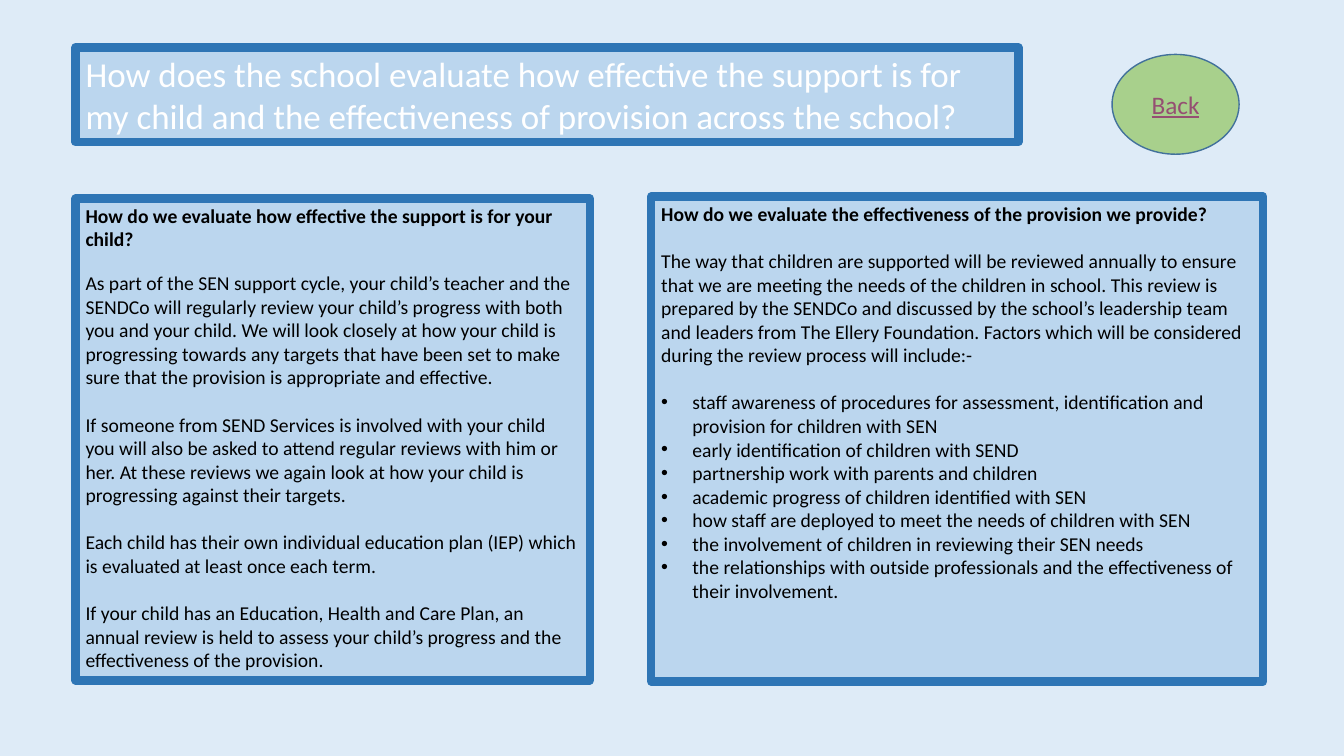
from lxml.etree import SubElement
from pptx import Presentation
from pptx.dml.color import RGBColor
from pptx.enum.shapes import MSO_SHAPE as Shape
from pptx.enum.text import MSO_ANCHOR as Anchor, PP_ALIGN as Align
from pptx.oxml.ns import qn
from pptx.util import Inches, Pt

FONT = "Calibri"
PALE_BLUE, PANEL_BLUE, BORDER_BLUE = "DEEBF7", "BBD6EE", "2E75B5"
GREEN, OUTLINE_BLUE, LINK_PURPLE = "A8D08C", "42719B", "954F72"
WHITE, BLACK = "FFFFFF", "000000"
LINE_GAP = 17
BULLET_INDENT = 0.31

TITLE = ("How does the school evaluate how effective the support is for my child "
         "and the effectiveness of provision across the school?")
CHILD_HEADING = "How do we evaluate how effective the support is for your child?"
CHILD_TEXTS = [
    "As part of the SEN support cycle, your child’s teacher and the SENDCo will regularly "
    "review your child’s progress with both you and your child. We will look closely at how "
    "your child is progressing towards any targets that have been set to make sure that the "
    "provision is appropriate and effective.",
    "If someone from SEND Services is involved with your child you will also be asked to attend "
    "regular reviews with him or her. At these reviews we again look at how your child is "
    "progressing against their targets.",
    "Each child has their own individual education plan (IEP) which is evaluated at least once "
    "each term.",
    "If your child has an Education, Health and Care Plan, an annual review is held to assess "
    "your child’s progress and the effectiveness of the provision.",
]
PROVISION_HEADING = "How do we evaluate the effectiveness of the provision we provide?"
PROVISION_TEXTS = [
    "The way that children are supported will be reviewed annually to ensure that we are meeting "
    "the needs of the children in school. This review is prepared by the SENDCo and discussed by "
    "the school’s leadership team and leaders from The Ellery Foundation. Factors which will be "
    "considered during the review process will include:-",
]
FACTORS = [
    "staff awareness of procedures for assessment, identification and provision for children "
    "with SEN",
    "early identification of children with SEND",
    "partnership work with parents and children",
    "academic progress of children identified with SEN",
    "how staff are deployed to meet the needs of children with SEN",
    "the involvement of children in reviewing their SEN needs",
    "the relationships with outside professionals and the effectiveness of their involvement.",
]


def color(value):
    """Turn a hex string into a colour."""
    return RGBColor.from_string(value)


def add_box(page, kind, box, fill, line, width):
    """Add a filled, outlined shape in the given box and return it."""
    shape = page.shapes.add_shape(kind, *map(Inches, box))
    shape.shadow.inherit = False
    shape.fill.solid()
    shape.fill.fore_color.rgb = color(fill)
    shape.line.color.rgb = color(line)
    shape.line.width = Pt(width)
    SubElement(shape.line._get_or_add_ln(), qn("a:round"))
    shape.text_frame.word_wrap = True
    shape.text_frame.vertical_anchor = Anchor.TOP
    return shape


def write(para, text, size, ink, align=Align.LEFT, bold=False, gap=0):
    """Fill a paragraph with styled text, a gap in points above it."""
    para.text = text
    para.alignment = align
    para.space_before = Pt(gap)
    para.font.name = FONT
    para.font.size = Pt(size)
    para.font.bold = bold
    para.font.color.rgb = color(ink)


def add_bullet(para):
    """Give a paragraph a hanging bullet."""
    props = para._p.get_or_add_pPr()
    props.set("marL", str(Inches(BULLET_INDENT)))
    props.set("indent", str(-Inches(BULLET_INDENT)))
    bullet_font = SubElement(props, qn("a:buFont"))
    bullet_font.set("typeface", "Arial")
    bullet = SubElement(props, qn("a:buChar"))
    bullet.set("char", "•")
    props.append(props.find(qn("a:defRPr")))


def add_title(page, box):
    """Place the framed question at the top of the page."""
    frame = add_box(page, Shape.RECTANGLE, box, PANEL_BLUE, BORDER_BLUE, 6).text_frame
    write(frame.paragraphs[0], TITLE, 25, WHITE)


def add_back_button(page, box):
    """Place the round back button."""
    frame = add_box(page, Shape.OVAL, box, GREEN, OUTLINE_BLUE, 1).text_frame
    frame.vertical_anchor = Anchor.MIDDLE
    para = frame.paragraphs[0]
    write(para, "Back", 18, LINK_PURPLE, Align.CENTER)
    para.font.underline = True


def add_panel(page, box, heading, texts, bullets=(), first_gap=LINE_GAP):
    """Place a framed panel with a bold heading, paragraphs and bullets."""
    frame = add_box(page, Shape.RECTANGLE, box, PANEL_BLUE, BORDER_BLUE, 6).text_frame
    write(frame.paragraphs[0], heading, 14, BLACK, bold=True)
    for index, text in enumerate(texts):
        gap = LINE_GAP if index else first_gap
        write(frame.add_paragraph(), text, 14, BLACK, gap=gap)
    for index, text in enumerate(bullets):
        para = frame.add_paragraph()
        write(para, text, 14, BLACK, gap=0 if index else LINE_GAP)
        add_bullet(para)


def main():
    """Build the slide and save the deck."""
    deck = Presentation()
    deck.slide_width, deck.slide_height = Inches(13.33), Inches(7.5)
    page = deck.slides.add_slide(deck.slide_layouts[6])
    page.background.fill.solid()
    page.background.fill.fore_color.rgb = color(PALE_BLUE)
    add_title(page, (0.75, 0.47, 9.35, 0.94))
    add_back_button(page, (11.03, 0.54, 1.26, 0.99))
    add_panel(page, (0.75, 1.97, 5.1, 4.78), CHILD_HEADING, CHILD_TEXTS, first_gap=14.5)
    add_panel(page, (6.46, 1.95, 6.07, 4.81), PROVISION_HEADING, PROVISION_TEXTS, FACTORS)
    deck.save("out.pptx")


if __name__ == "__main__":
    main()
